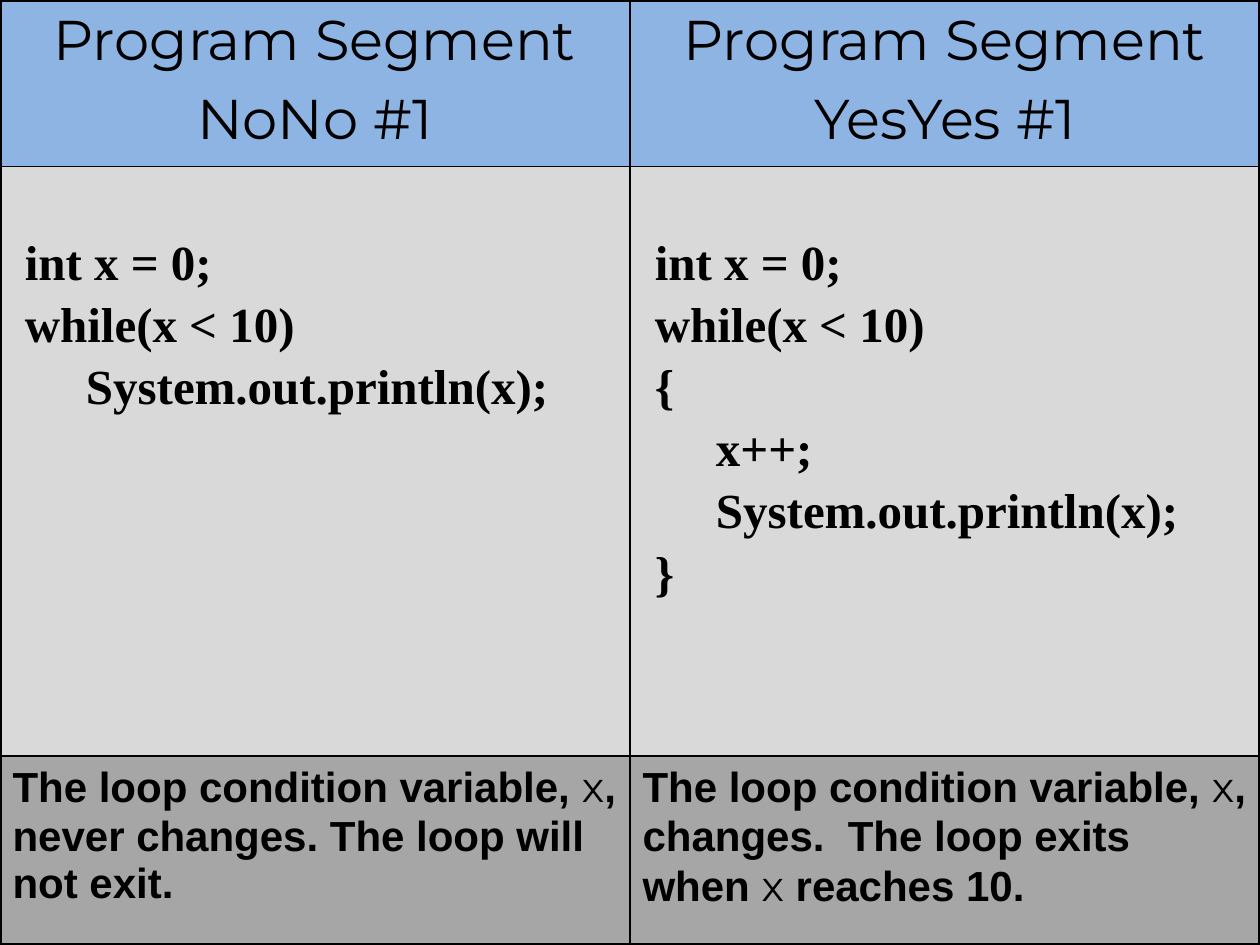
from lxml import etree
from pptx import Presentation
from pptx.dml.color import RGBColor
from pptx.enum.text import PP_ALIGN
from pptx.oxml.ns import qn
from pptx.util import Inches, Pt

CENTER, LEFT = PP_ALIGN.CENTER, PP_ALIGN.LEFT
BLACK = "000000"
ROW_HEIGHTS = [1.32, 4.68, 1.5]
ROW_FILLS = ["8EB4E3", "D9D9D9", "A6A6A6"]
OUTER_WIDTH, INNER_WIDTH = 2.25, 1

HEADINGS = [
    ["Program Segment", "NoNo #1"],
    ["Program Segment", "YesYes #1"],
]
CODE = [
    [" int x = 0;", " while(x < 10)", "      System.out.println(x);"],
    [" int x = 0;", " while(x < 10)", " {", "      x++;",
     "      System.out.println(x);", " }"],
]
EXPLANATIONS = [
    ["The loop condition variable, ", "x",
     ", never changes. The loop will not exit."],
    ["The loop condition variable, ", "x",
     ", changes.  The loop exits when ", "x", " reaches 10."],
]


def color(value):
    return RGBColor.from_string(value)


def format_span(span, font_name, size, bold):
    span.font.name = font_name
    span.font.size = Pt(size)
    span.font.bold = bold
    span.font.color.rgb = color(BLACK)


def write_lines(cell, lines, font_name, size, bold, gap, alignment=LEFT):
    frame = cell.text_frame
    frame.text = "\n".join(lines)
    for index, para in enumerate(frame.paragraphs):
        para.alignment = alignment
        para.space_before = Pt(gap if index else 0)
        for span in para.runs:
            format_span(span, font_name, size, bold)


def write_explanation(cell, pieces):
    para = cell.text_frame.paragraphs[0]
    for piece in pieces:
        span = para.add_run()
        span.text = piece
        is_variable = piece == "x"
        format_span(span, "Montserrat" if is_variable else "Arial", 24, not is_variable)


def set_borders(cell, row, column):
    sides = [
        ("a:lnL", column == 0),
        ("a:lnR", column == 1),
        ("a:lnT", row == 0),
        ("a:lnB", row == len(ROW_HEIGHTS) - 1),
    ]
    properties = cell._tc.get_or_add_tcPr()
    for position, (tag, is_outer) in enumerate(sides):
        line = etree.Element(qn(tag), w=str(Pt(OUTER_WIDTH if is_outer else INNER_WIDTH)))
        fill = etree.SubElement(line, qn("a:solidFill"))
        etree.SubElement(fill, qn("a:srgbClr"), val=BLACK)
        properties.insert(position, line)


def add_comparison_table(page):
    frame = page.shapes.add_table(3, 2, 0, 0, Inches(10), Inches(7.5))
    table = frame.table
    table.first_row = False
    table.horz_banding = False
    for column in table.columns:
        column.width = Inches(5)
    for row, height in enumerate(ROW_HEIGHTS):
        table.rows[row].height = Inches(height)
        for column in range(2):
            cell = table.cell(row, column)
            cell.fill.solid()
            cell.fill.fore_color.rgb = color(ROW_FILLS[row])
            set_borders(cell, row, column)
    return table


def main():
    deck = Presentation()
    deck.slide_width = Inches(10)
    deck.slide_height = Inches(7.5)
    page = deck.slides.add_slide(deck.slide_layouts[6])
    table = add_comparison_table(page)
    for column in range(2):
        heading, code, explanation = [table.cell(row, column) for row in range(3)]
        write_lines(heading, HEADINGS[column], "Montserrat", 32, False, 6.4, CENTER)
        code.margin_top = Inches(0.56)
        write_lines(code, CODE[column], "Times New Roman", 28, True, 4.5)
        write_explanation(explanation, EXPLANATIONS[column])
    deck.save("out.pptx")


if __name__ == "__main__":
    main()
